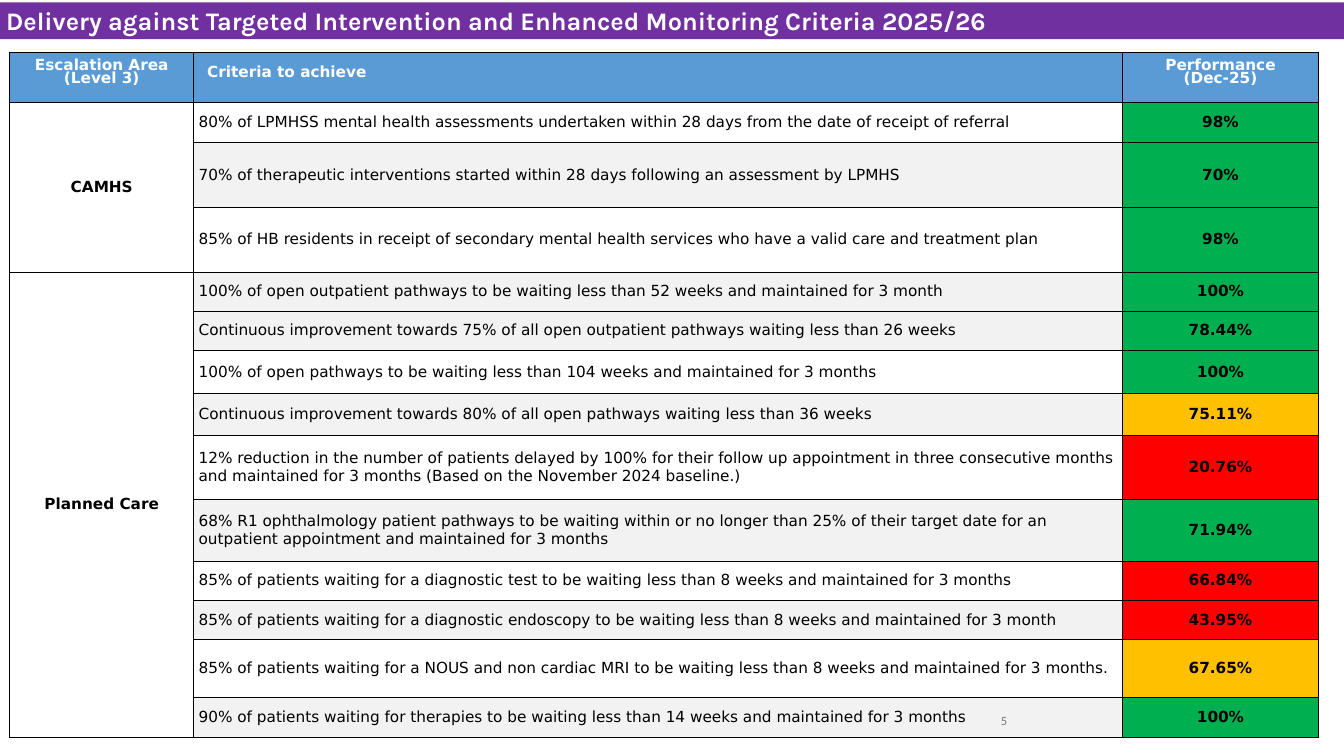
from lxml import etree
from pptx import Presentation
from pptx.dml.color import RGBColor
from pptx.enum.text import MSO_ANCHOR, MSO_AUTO_SIZE, PP_ALIGN
from pptx.oxml.ns import qn
from pptx.util import Emu, Pt

LEFT, CENTER, RIGHT = PP_ALIGN.LEFT, PP_ALIGN.CENTER, PP_ALIGN.RIGHT
MIDDLE = MSO_ANCHOR.MIDDLE
NO_AUTOFIT = MSO_AUTO_SIZE.NONE
TITLE_ONLY = 5

PURPLE, BLUE, STRIPE = "7030A0", "5B9BD5", "F2F2F2"
GREEN, AMBER, RED = "00B050", "FFC000", "FF0000"
BLACK, WHITE, GREY = "000000", "FFFFFF", "797979"

COLUMNS = [301, 1520, 320]
HEADER_HEIGHT = 83
HEADERS = [
    (["Escalation Area", "(Level 3)"], CENTER),
    (["Criteria to achieve"], LEFT),
    (["Performance", "(Dec-25)"], CENTER),
]
# Each area holds rows of height, criterion, criterion fill, result, result fill.
AREAS = {
    "CAMHS": [
        (65, "80% of LPMHSS mental health assessments undertaken within 28 days "
             "from the date of receipt of referral", None, "98%", GREEN),
        (106, "70% of therapeutic interventions started within 28 days following "
              "an assessment by LPMHS", STRIPE, "70%", GREEN),
        (106, "85% of HB residents in receipt of secondary mental health services "
              "who have a valid care and treatment plan", None, "98%", GREEN),
    ],
    "Planned Care": [
        (64, "100% of open outpatient pathways to be waiting less than 52 weeks "
             "and maintained for 3 month", STRIPE, "100%", GREEN),
        (64, "Continuous improvement towards 75% of all open outpatient pathways "
             "waiting less than 26 weeks", STRIPE, "78.44%", GREEN),
        (71, "100% of open pathways to be waiting less than 104 weeks and "
             "maintained for 3 months", None, "100%", GREEN),
        (68, "Continuous improvement towards 80% of all open pathways waiting "
             "less than 36 weeks", STRIPE, "75.11%", AMBER),
        (106, "12% reduction in the number of patients delayed by 100% for their "
              "follow up appointment in three consecutive months and maintained "
              "for 3 months (Based on the November 2024 baseline.)",
         None, "20.76%", RED),
        (100, "68% R1 ophthalmology patient pathways to be waiting within or no "
              "longer than 25% of their target date for an outpatient appointment "
              "and maintained for 3 months", STRIPE, "71.94%", GREEN),
        (64, "85% of patients waiting for a diagnostic test to be waiting less "
             "than 8 weeks and maintained for 3 months", None, "66.84%", RED),
        (65, "85% of patients waiting for a diagnostic endoscopy to be waiting "
             "less than 8 weeks and maintained for 3 month",
         STRIPE, "43.95%", RED),
        (94, "85% of patients waiting for a NOUS and non cardiac MRI to be waiting "
             "less than 8 weeks and maintained for 3 months.",
         None, "67.65%", AMBER),
        (65, "90% of patients waiting for therapies to be waiting less than 14 "
             "weeks and maintained for 3 months", STRIPE, "100%", GREEN),
    ],
}


def px(n):
    """Convert px (100 to the inch) to EMU."""
    return Emu(n * 9144)


def rgb(color):
    return RGBColor.from_string(color)


def write(tf, lines, *, size=18, font="DejaVu Sans", color=BLACK, bold=False,
          align=LEFT, leading=None, gap=0):
    """Write one paragraph per line, with gap points between them."""
    for i, line in enumerate(lines):
        p = tf.add_paragraph() if i else tf.paragraphs[0]
        p.alignment = align
        p.space_before = Pt(gap if i else 0)
        if leading:
            p.line_spacing = Pt(leading)
        r = p.add_run()
        r.text = line
        r.font.size, r.font.name, r.font.bold = Pt(size), font, bold
        r.font.color.rgb = rgb(color)


def add_borders(cell, color=BLACK, width=1):
    tc_pr = cell._tc.get_or_add_tcPr()
    for side in ("a:lnL", "a:lnR", "a:lnT", "a:lnB"):
        ln = etree.SubElement(tc_pr, qn(side), w=str(Pt(width)))
        fill = etree.SubElement(ln, qn("a:solidFill"))
        etree.SubElement(fill, qn("a:srgbClr"), val=color)


def fill_cell(cell, lines, fill=None, inset=(8, 8), **fmt):
    if fill:
        cell.fill.solid()
        cell.fill.fore_color.rgb = rgb(fill)
    else:
        cell.fill.background()
    cell.vertical_anchor = MIDDLE
    cell.margin_left = cell.margin_right = px(inset[0])
    cell.margin_top = cell.margin_bottom = px(inset[1])
    write(cell.text_frame, lines, **fmt)


def add_title_bar(slide, x, y, w, h):
    sp = slide.shapes.title
    sp.left, sp.top, sp.width, sp.height = px(x), px(y), px(w), px(h)
    sp.fill.solid()
    sp.fill.fore_color.rgb = rgb(PURPLE)
    tf = sp.text_frame
    tf.auto_size, tf.vertical_anchor, tf.word_wrap = NO_AUTOFIT, MIDDLE, True
    write(tf, ["Delivery against Targeted Intervention and Enhanced Monitoring "
               "Criteria 2025/26"],
          size=29.7, font="Karla", color=WHITE, bold=True)


def add_criteria_table(slide, x, y):
    heights = [HEADER_HEIGHT] + [row[0] for rows in AREAS.values() for row in rows]
    table = slide.shapes.add_table(
        len(heights), len(COLUMNS), px(x), px(y),
        px(sum(COLUMNS)), px(sum(heights))).table
    table.first_row = table.horz_banding = False
    for column, width in zip(table.columns, COLUMNS):
        column.width = px(width)
    for row, height in zip(table.rows, heights):
        row.height = px(height)
    for cell in table.iter_cells():
        add_borders(cell)

    for c, (lines, align) in enumerate(HEADERS):
        fill_cell(table.cell(0, c), lines, BLUE, inset=(22, 11), color=WHITE,
                  bold=True, align=align, leading=8, gap=8)
    top = 1
    for area, rows in AREAS.items():
        table.cell(top, 0).merge(table.cell(top + len(rows) - 1, 0))
        fill_cell(table.cell(top, 0), [area], bold=True, align=CENTER)
        for r, (_, criterion, shade, result, status) in enumerate(rows, top):
            fill_cell(table.cell(r, 1), [criterion], shade)
            fill_cell(table.cell(r, 2), [result], status, bold=True, align=CENTER)
        top += len(rows)


def add_page_number(slide, x, y, w, h):
    tf = slide.shapes.add_textbox(px(x), px(y), px(w), px(h)).text_frame
    tf.word_wrap, tf.vertical_anchor = True, MIDDLE
    tf.margin_left = tf.margin_right = px(16)
    tf.margin_top = tf.margin_bottom = px(8)
    write(tf, ["5"], size=14.8, font="Calibri", color=GREY, align=RIGHT)


def main():
    prs = Presentation()
    prs.slide_width, prs.slide_height = px(2199), px(1237)
    slide = prs.slides.add_slide(prs.slide_layouts[TITLE_ONLY])
    add_title_bar(slide, 0, 4, 2199, 60)
    add_criteria_table(slide, 16, 85)
    add_page_number(slide, 1262, 1146, 402, 66)
    prs.save("out.pptx")


if __name__ == "__main__":
    main()
